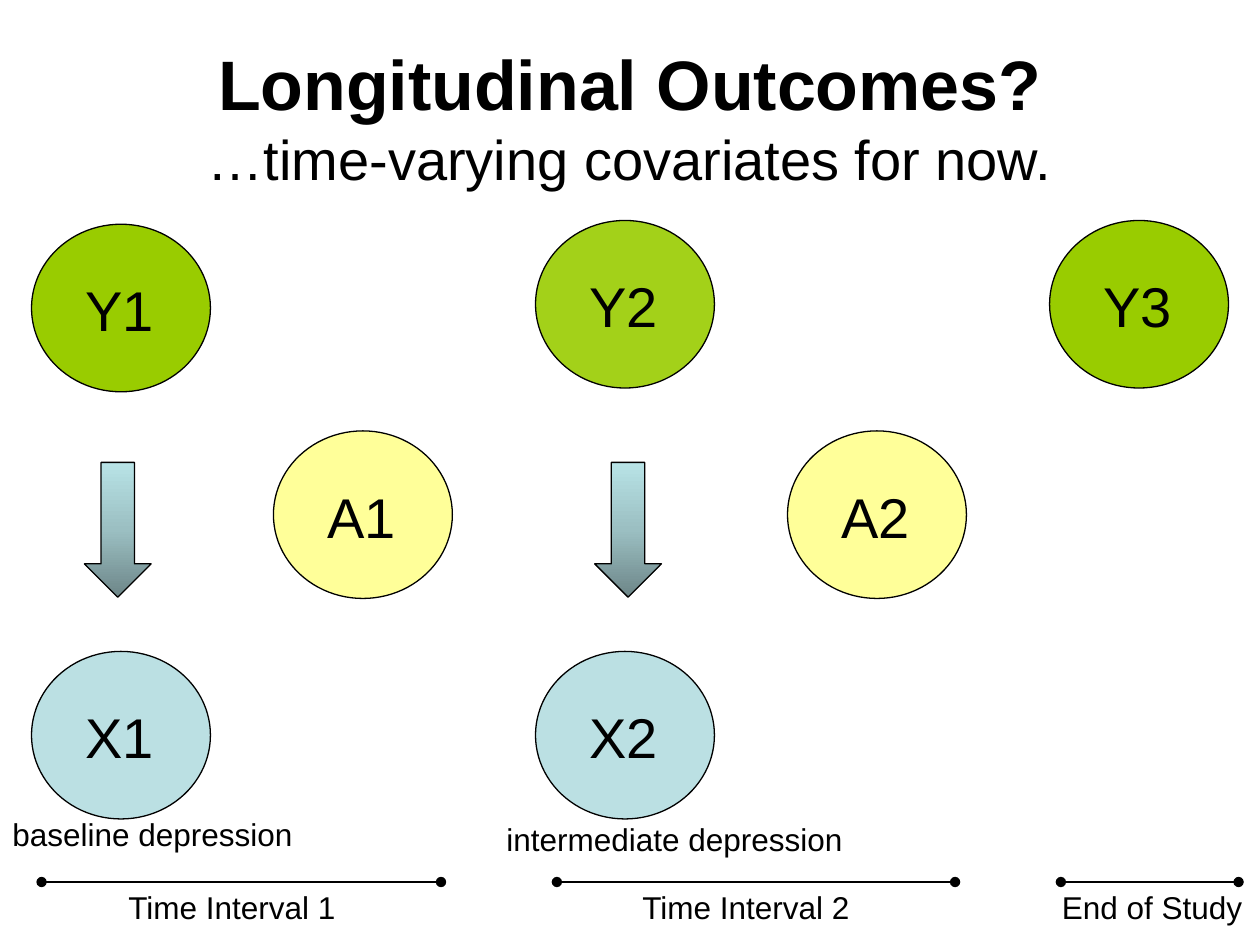
from copy import deepcopy
from dataclasses import dataclass

from lxml.etree import SubElement as Sub
from pptx import Presentation
from pptx.dml.color import RGBColor as RGB
from pptx.enum.shapes import MSO_CONNECTOR as Conn, MSO_SHAPE as Shape
from pptx.enum.text import MSO_ANCHOR as Anchor, PP_ALIGN as Align
from pptx.oxml.ns import qn
from pptx.util import Inches, Pt


@dataclass(frozen=True)
class Theme:
    font: str = "Arial"
    ink: str = "000000"
    green: str = "99CC00"
    yellow: str = "FFFF99"
    blue: str = "BBE0E3"
    shades: tuple = ("6D8688", "9BBFC2", "B8E3E6")
    head: int = 40
    large: int = 32
    small: int = 18
    line: float = 0.75


theme = Theme()
deck = Presentation()
deck.slide_width, deck.slide_height = Inches(10), Inches(7.5)
slide = deck.slides.add_slide(deck.slide_layouts[5])
shapes = slide.shapes


def write(text, box=None, para=None, size=theme.small, bold=False):
    """Add text to a paragraph, or to a new text box at box."""
    if para is None:
        frame = shapes.add_textbox(*map(Inches, box)).text_frame
        frame.word_wrap = True
        para = frame.paragraphs[0]
    run = para.add_run()
    run.text = text
    font = run.font
    font.name, font.size, font.bold = theme.font, Pt(size), bold
    font.color.rgb = RGB.from_string(theme.ink)


def draw(kind, box):
    """Add a preset shape with a thin outline and no shadow."""
    shape = shapes.add_shape(kind, *map(Inches, box))
    shape.shadow.inherit = False
    shape.line.color.rgb = RGB.from_string(theme.ink)
    shape.line.width = Pt(theme.line)
    return shape


# Title with a lighter second line
title = shapes.title
title.left, title.top = Inches(0.5), Inches(0.3)
title.width, title.height = Inches(9), Inches(1.25)
title.text_frame.vertical_anchor = Anchor.MIDDLE
para = title.text_frame.paragraphs[0]
para.alignment = Align.CENTER
write("Longitudinal Outcomes?", para=para, size=theme.head, bold=True)
para.add_line_break()
write("…time-varying covariates for now.", para=para, size=theme.large)

# Variables: name, left, top, colour, opacity in percent
nodes = [
    ("A1", 2.17, 3.42, theme.yellow, 100),
    ("A2", 6.25, 3.42, theme.yellow, 100),
    ("Y3", 8.33, 1.75, theme.green, 100),
    ("Y1", 0.25, 1.78, theme.green, 100),
    ("Y2", 4.25, 1.75, theme.green, 90),
    ("X1", 0.25, 5.17, theme.blue, 100),
    ("X2", 4.25, 5.17, theme.blue, 100),
]
for name, x, y, color, alpha in nodes:
    node = draw(Shape.OVAL, (x, y, 1.42, 1.33))
    node.fill.solid()
    node.fill.fore_color.rgb = RGB.from_string(color)
    if alpha < 100:
        tint = node._element.spPr.find(qn("a:solidFill"))[0]
        Sub(tint, qn("a:alpha"), val=str(alpha * 1000))
    write(name, box=(x + 0.33, y + 0.36, 0.92, 0.63), size=theme.large)

# Time spans: label, label left, label width, line start, line end
spans = [
    ("Time Interval 1", 0.92, 1.92, 0.33, 3.5),
    ("Time Interval 2", 5, 1.92, 4.42, 7.58),
    ("End of Study", 8.33, 1.67, 8.42, 9.83),
]
for name, x, width, start, end in spans:
    write(name, box=(x, 7, width, 0.4))
    span = shapes.add_connector(
        Conn.STRAIGHT, Inches(end), Inches(7), Inches(start), Inches(7))
    span.line.color.rgb = RGB.from_string(theme.ink)
    span.line.width = Pt(theme.line)
    for tip in ("a:headEnd", "a:tailEnd"):
        Sub(span.line._get_or_add_ln(), qn(tip), type="oval")
    Sub(span._element.spPr, qn("a:effectLst"))

# Arrows from Y to X, dark at the tip
for x in (0.67, 4.72):
    arrow = draw(Shape.DOWN_ARROW, (x, 3.67, 0.53, 1.07))
    fill = arrow.fill
    fill.gradient()
    fill.gradient_angle = 90
    stops = arrow._element.spPr.find(qn("a:gradFill")).find(qn("a:gsLst"))
    stops.insert(1, deepcopy(stops[0]))
    for stop, place, shade in zip(fill.gradient_stops, (0, 0.5, 1), theme.shades):
        stop.position = place
        stop.color.rgb = RGB.from_string(shade)

# Captions below X
write("baseline depression", box=(0, 6.42, 2.92, 0.4))
write("intermediate depression", box=(3.92, 6.46, 3.17, 0.4))

deck.save("out.pptx")
